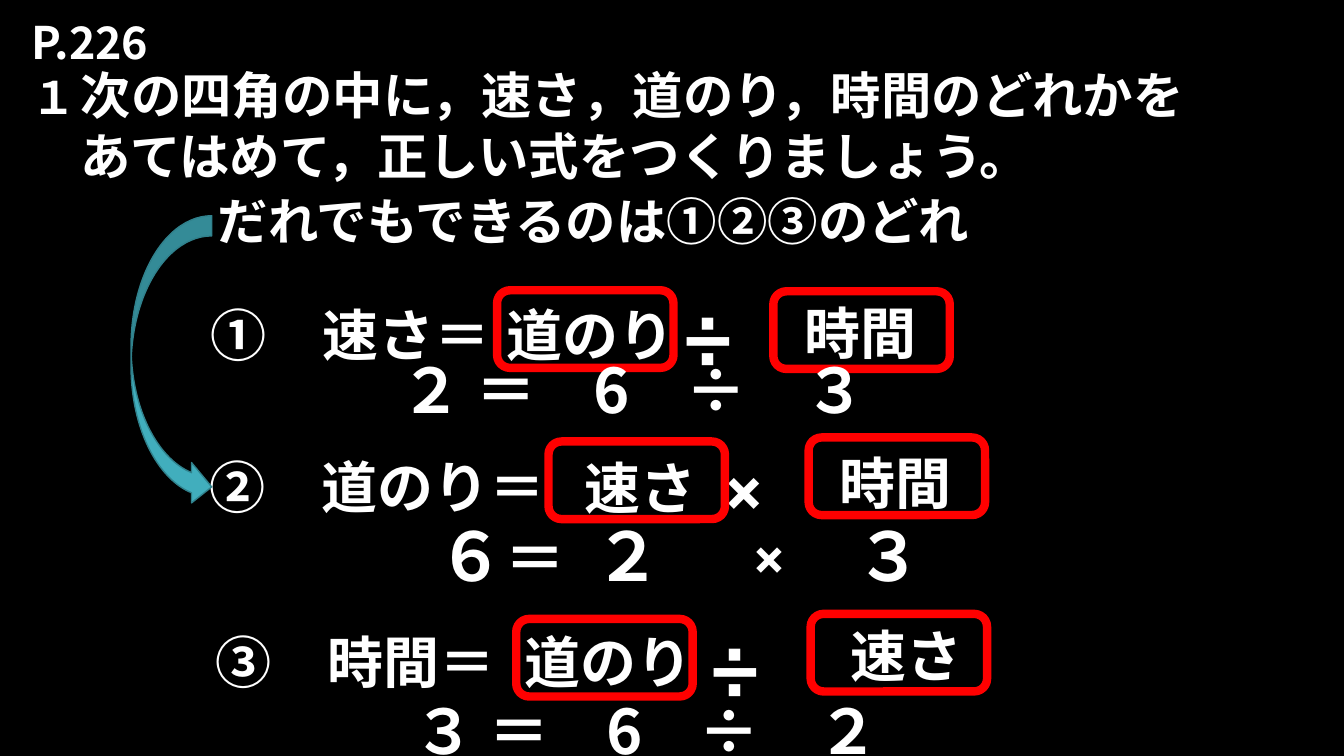
from dataclasses import dataclass

from lxml import etree
from pptx import Presentation
from pptx import util as u
from pptx.dml.color import RGBColor
from pptx.enum import shapes, text
from pptx.oxml.ns import qn

EMU_PER_PX = 9144
BLACK = RGBColor(0x00, 0x00, 0x00)
WHITE = RGBColor(0xFF, 0xFF, 0xFF)
RED = RGBColor(0xFF, 0x00, 0x00)
TEAL = RGBColor(0x41, 0xAE, 0xBD)
DARK_TEAL = RGBColor(0x30, 0x81, 0x8C)
CABIN = "Cabin"
NOTO = "Noto Sans CJK JP"
FRAME_FORMAT = {
    "word_wrap": True,
    "auto_size": text.MSO_AUTO_SIZE.NONE,
    "vertical_anchor": text.MSO_ANCHOR.TOP,
    "margin_left": u.Inches(0.1),
    "margin_right": u.Inches(0.1),
    "margin_top": u.Inches(0.05),
    "margin_bottom": u.Inches(0.05),
}


@dataclass(frozen=True)
class Area:
    left: int
    top: int
    width: int
    height: int


@dataclass(frozen=True)
class Label:
    area: Area
    lines: tuple[str, ...]
    size: int
    font: str = CABIN
    leading: int | None = None


@dataclass(frozen=True)
class Term:
    wording: str
    size: int
    center: int = 0


@dataclass(frozen=True)
class Calculation:
    area: Area
    terms: tuple[Term, ...]
    font: str = NOTO
    leading: int | None = 53


def division(left: int, top: int, speed: str, time: str) -> Calculation:
    wordings = (speed, "＝", "6", "÷", time)
    centers = (0, 105, 210, 314, 432)
    terms = tuple(Term(wording, 44, center) for wording, center in zip(wordings, centers))
    return Calculation(Area(left, top, 534, 84), terms)


INSTRUCTION = Label(
    Area(70, 59, 1159, 131),
    ("次の四角の中に，速さ，道のり，時間のどれかを", "あてはめて，正しい式をつくりましょう。"),
    36,
)
LABELS = (
    Label(Area(21, 9, 240, 64), ("P.226", "１"), 32, NOTO, 39),
    Label(Area(206, 184, 845, 71), ("だれでもできるのは①②③のどれ",), 36),
    Label(Area(199, 293, 306, 77), ("①　速さ＝",), 40),
    Label(Area(198, 444, 365, 77), ("②　道のり＝",), 40),
    Label(Area(204, 618, 306, 77), ("③　時間＝",), 40),
    Label(Area(493, 293, 196, 77), ("道のり",), 40),
    Label(Area(788, 291, 133, 77), ("時間",), 40),
    Label(Area(570, 445, 148, 77), ("速さ",), 40),
    Label(Area(823, 440, 136, 77), ("時間",), 40),
    Label(Area(510, 618, 196, 77), ("道のり",), 40),
    Label(Area(834, 612, 148, 77), ("速さ",), 40),
    Label(Area(667, 268, 96, 121), ("÷",), 66),
    Label(Area(708, 419, 96, 121), ("×",), 66),
    Label(Area(694, 596, 96, 121), ("÷",), 66),
)
CALCULATIONS = (
    division(387, 344, "２", "３"),
    Calculation(
        Area(424, 497, 760, 101),
        (
            Term("６", 48),
            Term("＝", 44, 97),
            Term("２", 48, 189),
            Term("×", 54, 329),
            Term("３", 48, 448),
        ),
        CABIN,
        None,
    ),
    division(400, 682, "３", "２"),
)
ANSWER_CORNERS = ((493, 288), (767, 289), (544, 438), (802, 434), (512, 614), (804, 609))
ARROW = Area(130, 214, 80, 289)


def px(length: int) -> u.Emu:
    return u.Emu(length * EMU_PER_PX)


def bounds(area: Area) -> tuple[u.Emu, ...]:
    return tuple(px(side) for side in (area.left, area.top, area.width, area.height))


def apply(target, formats: dict) -> None:
    for name, value in formats.items():
        setattr(target, name, value)


def add_run(paragraph, wording: str, size: int, font: str) -> None:
    run = paragraph.add_run()
    run.text = wording
    run.font.color.rgb = WHITE
    apply(run.font, {"size": u.Pt(size), "bold": True, "name": font})
    etree.SubElement(run.font._element, qn("a:ea")).set("typeface", font)


def format_paragraph(paragraph, leading: int | None) -> None:
    paragraph.alignment = text.PP_ALIGN.LEFT
    if leading:
        paragraph.line_spacing = u.Pt(leading)


def write_label(holder, label: Label) -> None:
    apply(holder, dict(zip(("left", "top", "width", "height"), bounds(label.area))))
    frame = holder.text_frame
    apply(frame, FRAME_FORMAT)
    for index, line in enumerate(label.lines):
        paragraph = frame.add_paragraph() if index else frame.paragraphs[0]
        format_paragraph(paragraph, label.leading)
        add_run(paragraph, line, label.size, label.font)


def add_calculation(slide, calculation: Calculation) -> None:
    frame = slide.shapes.add_textbox(*bounds(calculation.area)).text_frame
    apply(frame, FRAME_FORMAT)
    paragraph = frame.paragraphs[0]
    format_paragraph(paragraph, calculation.leading)
    stops = etree.SubElement(paragraph._p.get_or_add_pPr(), qn("a:tabLst"))
    for term in calculation.terms:
        if term.center:
            stop = etree.SubElement(stops, qn("a:tab"))
            stop.set("pos", str(px(term.center)))
            stop.set("algn", "ctr")
        wording = f"\t{term.wording}" if term.center else term.wording
        add_run(paragraph, wording, term.size, calculation.font)


def add_outline(slide, kind, area: Area, color: RGBColor, width: int):
    outline = slide.shapes.add_shape(kind, *bounds(area))
    outline.shadow.inherit = False
    outline.fill.background()
    outline.line.color.rgb = color
    outline.line.width = u.Pt(width)
    return outline


def main() -> None:
    deck = Presentation()
    apply(deck, {"slide_width": px(1333), "slide_height": px(750)})
    slide = deck.slides.add_slide(deck.slide_layouts[5])
    slide.background.fill.solid()
    slide.background.fill.fore_color.rgb = BLACK

    write_label(slide.shapes.title, INSTRUCTION)
    for label in LABELS:
        write_label(slide.shapes.add_textbox(*bounds(label.area)), label)
    for left, top in ANSWER_CORNERS:
        add_outline(
            slide, shapes.MSO_SHAPE.ROUNDED_RECTANGLE, Area(left, top, 175, 77), RED, 6
        )
    arrow = add_outline(slide, shapes.MSO_SHAPE.CURVED_RIGHT_ARROW, ARROW, DARK_TEAL, 1)
    arrow.fill.solid()
    arrow.fill.fore_color.rgb = TEAL
    for calculation in CALCULATIONS:
        add_calculation(slide, calculation)

    deck.save("out.pptx")


if __name__ == "__main__":
    main()
